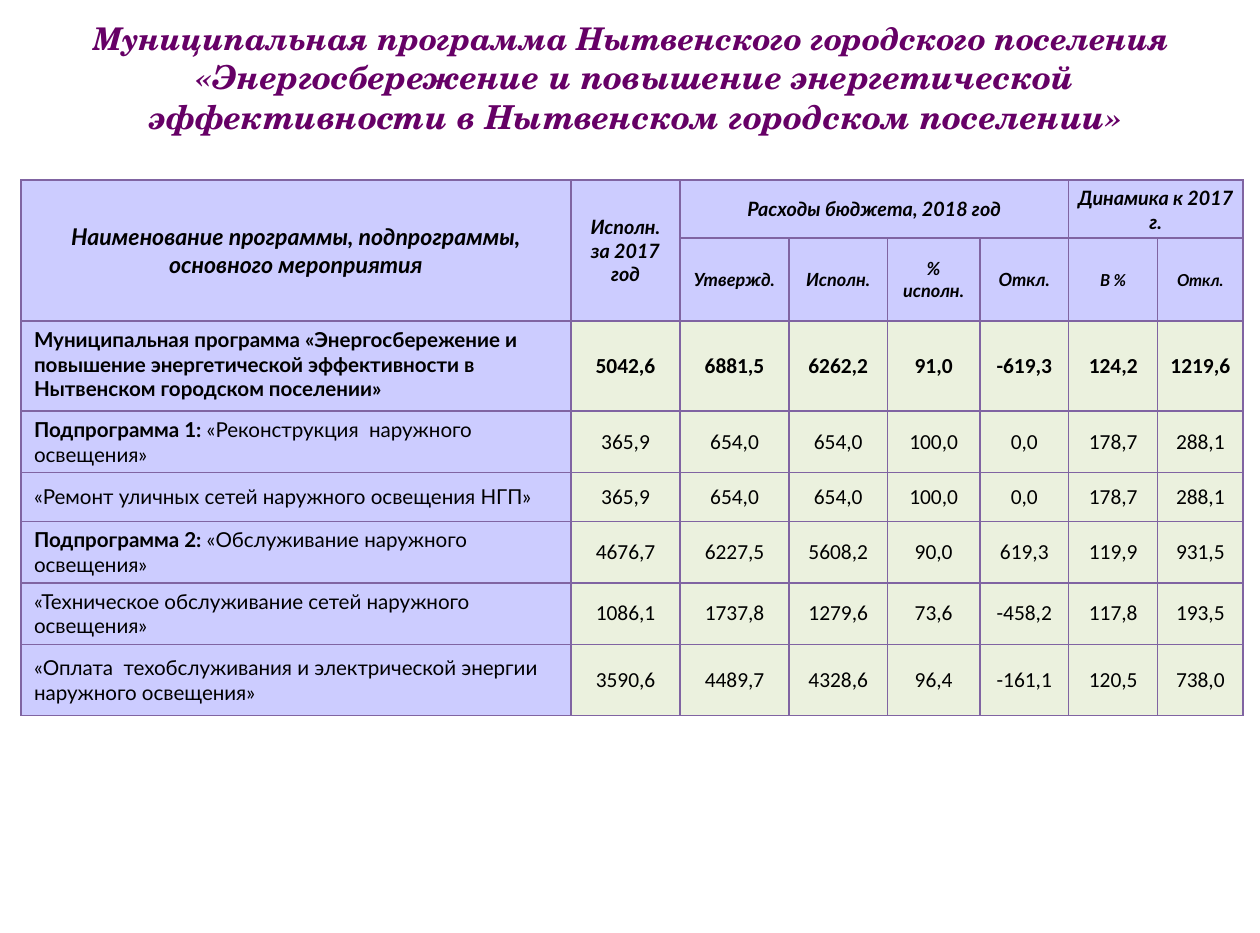
from lxml import etree
from pptx import Presentation
from pptx.dml.color import RGBColor
from pptx.enum.text import MSO_ANCHOR, MSO_AUTO_SIZE, PP_ALIGN
from pptx.oxml.ns import qn
from pptx.util import Cm, Inches, Pt

CENTER, LEFT = PP_ALIGN.CENTER, PP_ALIGN.LEFT
MIDDLE, TOP = MSO_ANCHOR.MIDDLE, MSO_ANCHOR.TOP
NO_AUTOFIT = MSO_AUTO_SIZE.NONE
TITLE_ONLY = 5

SLIDE_WIDTH, SLIDE_HEIGHT = Cm(27), Cm(20)
PLUM, BLACK, VIOLET = "660066", "000000", "8064A2"
LILAC, PALE_GREEN = "CCCCFF", "EBF1DE"
HEADING_FONT, LABEL_FONT, VALUE_FONT = "TeX Gyre Schola", "Lato", "Calibri"
WIDE_MARGINS = (0.11, 0.05, 0.11, 0.05)
VALUE_MARGINS = (0.1, 0.05, 0.1, 0.05)
TIGHT_MARGINS = (0.01, 0.01, 0.01, 0)

COLUMN_WIDTHS = [4.64, 0.92, 0.92, 0.83, 0.78, 0.75, 0.75, 0.72]
ROW_HEIGHTS = [0.49, 0.7, 0.76, 0.52, 0.41, 0.52, 0.52, 0.6]

TITLE_LINES = [
    ("Муниципальная программа Нытвенского городского поселения ", 19),
    ("«Энергосбережение и повышение энергетической эффективности "
     "в Нытвенском городском поселении»", 20),
]

# Row, column, rows spanned, columns spanned, text, size
HEADERS = [
    (0, 0, 2, 1, "Наименование программы, подпрограммы, основного мероприятия", 14),
    (0, 1, 2, 1, "Исполн. за 2017 год", 12),
    (0, 2, 1, 4, "Расходы бюджета, 2018 год", 12),
    (0, 6, 1, 2, "Динамика к 2017 г.", 12),
    (1, 2, 1, 1, "Утвержд.", 11),
    (1, 3, 1, 1, "Исполн.", 11),
    (1, 4, 1, 1, "% исполн.", 11),
    (1, 5, 1, 1, "Откл.", 11),
    (1, 6, 1, 1, "В %", 10),
    (1, 7, 1, 1, "Откл.", 10),
]
FIRST_DYNAMICS_COLUMN = 6

# Bold part of the label, plain part of the label, values
PROGRAMMES = [
    ("Муниципальная программа «Энергосбережение и повышение энергетической "
     "эффективности в Нытвенском городском поселении»", "",
     ["5042,6", "6881,5", "6262,2", "91,0", "-619,3", "124,2", "1219,6"]),
    ("Подпрограмма 1:", " «Реконструкция  наружного освещения»",
     ["365,9", "654,0", "654,0", "100,0", "0,0", "178,7", "288,1"]),
    ("", "«Ремонт уличных сетей наружного освещения НГП»",
     ["365,9", "654,0", "654,0", "100,0", "0,0", "178,7", "288,1"]),
    ("Подпрограмма 2:", " «Обслуживание наружного освещения»",
     ["4676,7", "6227,5", "5608,2", "90,0", "619,3", "119,9", "931,5"]),
    ("", "«Техническое обслуживание сетей наружного освещения»",
     ["1086,1", "1737,8", "1279,6", "73,6", "-458,2", "117,8", "193,5"]),
    ("", "«Оплата  техобслуживания и электрической энергии наружного освещения»",
     ["3590,6", "4489,7", "4328,6", "96,4", "-161,1", "120,5", "738,0"]),
]


def rgb(hex_colour):
    return RGBColor.from_string(hex_colour)


def add_run(paragraph, text, font, size, colour=BLACK, bold=False, italic=False):
    run = paragraph.add_run()
    run.text = text
    formats = {"name": font, "size": Pt(size), "bold": bold, "italic": italic}
    for attribute, value in formats.items():
        setattr(run.font, attribute, value)
    run.font.color.rgb = rgb(colour)


def set_margins(target, margins):
    for side, inches in zip(("left", "top", "right", "bottom"), margins):
        setattr(target, f"margin_{side}", Inches(inches))


def add_borders(cell, colour, width):
    properties = cell._tc.get_or_add_tcPr()
    for position, side in enumerate(("lnL", "lnR", "lnT", "lnB")):
        line = etree.Element(qn(f"a:{side}"), w=str(Pt(width)))
        fill = etree.SubElement(line, qn("a:solidFill"))
        etree.SubElement(fill, qn("a:srgbClr"), val=colour)
        properties.insert(position, line)


def style_cell(cell, fill, margins):
    cell.fill.solid()
    cell.fill.fore_color.rgb = rgb(fill)
    cell.vertical_anchor = MIDDLE
    set_margins(cell, margins)
    add_borders(cell, VIOLET, 1)


def start_text(cell, alignment):
    paragraph = cell.text_frame.paragraphs[0]
    paragraph.alignment = alignment
    return paragraph


def format_title(title):
    title.left, title.width = int(SLIDE_WIDTH * 0.038), int(SLIDE_WIDTH * 0.933)
    title.top, title.height = int(SLIDE_HEIGHT * 0.01), int(SLIDE_HEIGHT * 0.146)
    frame = title.text_frame
    frame.auto_size = NO_AUTOFIT
    frame.word_wrap = True
    frame.vertical_anchor = MIDDLE
    set_margins(frame, WIDE_MARGINS)
    paragraph = frame.paragraphs[0]
    paragraph.alignment = CENTER
    for number, (text, size) in enumerate(TITLE_LINES):
        if number:
            paragraph.add_line_break()
        add_run(paragraph, text, HEADING_FONT, size, PLUM, bold=True, italic=True)


def add_budget_grid(slide):
    frame = slide.shapes.add_table(
        len(ROW_HEIGHTS), len(COLUMN_WIDTHS),
        SLIDE_WIDTH // 60, int(SLIDE_HEIGHT * 0.193),
        Inches(sum(COLUMN_WIDTHS)), Inches(sum(ROW_HEIGHTS)))
    budget = frame.table
    budget.first_row = budget.horz_banding = False
    for column, width in zip(budget.columns, COLUMN_WIDTHS):
        column.width = Inches(width)
    for row, height in zip(budget.rows, ROW_HEIGHTS):
        row.height = Inches(height)
    for row_number, row in enumerate(budget.rows):
        for column_number, cell in enumerate(row.cells):
            if row_number < 2 or column_number == 0:
                style_cell(cell, LILAC, WIDE_MARGINS)
            else:
                style_cell(cell, PALE_GREEN, VALUE_MARGINS)
    return budget


def fill_headers(budget):
    for row, column, rows, columns, text, size in HEADERS:
        cell = budget.cell(row, column)
        if rows * columns > 1:
            cell.merge(budget.cell(row + rows - 1, column + columns - 1))
        if column >= FIRST_DYNAMICS_COLUMN:
            set_margins(cell, TIGHT_MARGINS)
        add_run(start_text(cell, CENTER), text, LABEL_FONT, size,
                bold=True, italic=True)


def fill_programmes(budget):
    for row, (bold_part, plain_part, values) in enumerate(PROGRAMMES, start=2):
        is_total = not plain_part
        label = budget.cell(row, 0)
        if is_total:
            label.vertical_anchor = TOP
        paragraph = start_text(label, LEFT)
        for text, bold in ((bold_part, True), (plain_part, False)):
            if text:
                add_run(paragraph, text, LABEL_FONT, 12.5, bold=bold)
        for column, value in enumerate(values, start=1):
            add_run(start_text(budget.cell(row, column), CENTER), value,
                    VALUE_FONT, 13, bold=is_total)


def main():
    presentation = Presentation()
    presentation.slide_width, presentation.slide_height = SLIDE_WIDTH, SLIDE_HEIGHT
    slide = presentation.slides.add_slide(presentation.slide_layouts[TITLE_ONLY])

    # Programme title
    format_title(slide.shapes.title)

    # Budget execution table
    budget = add_budget_grid(slide)
    fill_headers(budget)
    fill_programmes(budget)

    presentation.save("out.pptx")


if __name__ == "__main__":
    main()
